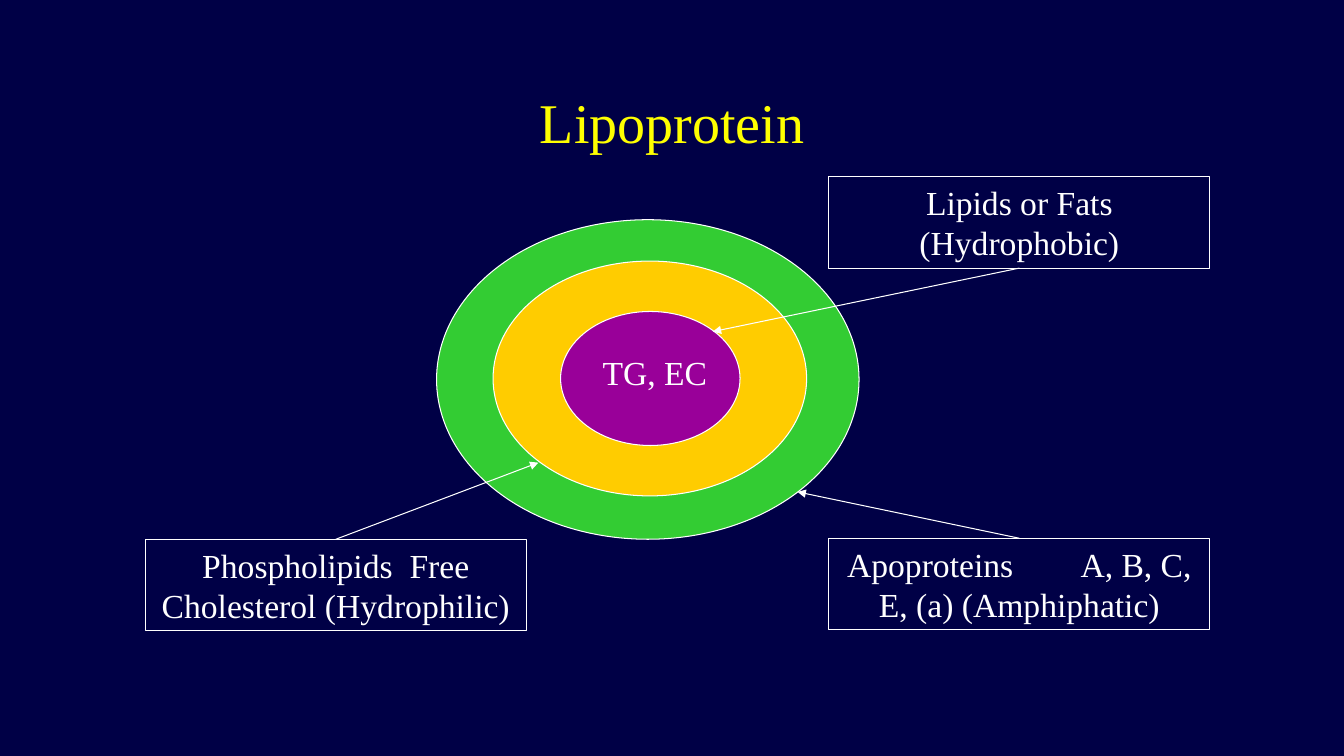
from lxml import etree
from pptx import Presentation
from pptx import util as u
from pptx.dml.color import RGBColor
from pptx.enum import shapes, text
from pptx.oxml.ns import qn

# Content; lengths in px, 100 px to the inch
TITLE = ("Lipoprotein", (100, 82, 1133, 77))
CORE = ("TG, EC", (544, 344, 211, 50))
NAVY = RGBColor(0x00, 0x00, 0x46)
YELLOW = RGBColor(0xFF, 0xFF, 0x00)
WHITE = RGBColor(0xFF, 0xFF, 0xFF)
GREEN = RGBColor(0x33, 0xCC, 0x33)
AMBER = RGBColor(0xFF, 0xCC, 0x00)
PURPLE = RGBColor(0x99, 0x00, 0x99)
LAYERS = [
    ((433, 218, 419, 317), GREEN),
    ((489, 259, 311, 233), AMBER),
    ((556, 309, 178, 133), PURPLE),
]
# Words before the gap, words after it, extra gap in points,
# box left and top, arrow side, arrow target
LABELS = [
    ("Phospholipids", "Free Cholesterol (Hydrophilic)", 6, (144, 535), "top", (534, 459)),
    ("Apoproteins", "A, B, C, E, (a) (Amphiphatic)", 42, (822, 534), "top", (791, 488)),
    ("Lipids or Fats", "(Hydrophobic)", 0, (822, 175), "bottom", (707, 329)),
]
LABEL_W, LABEL_H = 378, 91
FONT = "Times New Roman"


def px(*lengths):
    return [u.Emu(length * 9144) for length in lengths]


def write(shape, pieces, size, color):
    """Fill a shape with one centred paragraph of (words, tracking) pieces."""
    frame = shape.text_frame
    frame.word_wrap = True
    para = frame.paragraphs[0]
    para.alignment = text.PP_ALIGN.CENTER
    for words, tracking in pieces:
        span = para.add_run()
        span.text = words
        span.font.name = FONT
        span.font.size = u.Pt(size)
        span.font.color.rgb = color
        if tracking:
            span.font._element.set("spc", str(tracking * 100))
    return frame


def outline(shape):
    shape.line.color.rgb = WHITE
    shape.line.width = u.Pt(0.75)


def add_outlined(page, kind, place, color=None):
    shape = page.shapes.add_shape(kind, *px(*place))
    shape.shadow.inherit = False
    if color is None:
        shape.fill.background()
    else:
        shape.fill.solid()
        shape.fill.fore_color.rgb = color
    outline(shape)
    return shape


def add_arrow(page, start, end):
    arrow = page.shapes.add_connector(shapes.MSO_CONNECTOR.STRAIGHT, *px(*start, *end))
    outline(arrow)
    etree.SubElement(arrow.line._get_or_add_ln(), qn("a:tailEnd"), type="triangle")
    etree.SubElement(arrow._element.spPr, qn("a:effectLst"))


def main():
    deck = Presentation()
    deck.slide_width, deck.slide_height = px(1333, 750)
    page = deck.slides.add_slide(deck.slide_layouts[5])
    page.background.fill.solid()
    page.background.fill.fore_color.rgb = NAVY

    # Title
    words, place = TITLE
    title = page.shapes.title
    title.left, title.top, title.width, title.height = px(*place)
    frame = write(title, [(words, 0)], 40, YELLOW)
    frame.vertical_anchor = text.MSO_ANCHOR.MIDDLE

    # Particle layers, from the outside in
    for place, color in LAYERS:
        add_outlined(page, shapes.MSO_SHAPE.OVAL, place, color)
    words, place = CORE
    core = page.shapes.add_textbox(*px(*place))
    frame = write(core, [(words, 0)], 24, WHITE)
    frame.paragraphs[0].line_spacing = u.Pt(29)

    # Labels, each with an arrow to its layer
    for before, after, gap, (left, top), side, target in LABELS:
        box = add_outlined(page, shapes.MSO_SHAPE.RECTANGLE, (left, top, LABEL_W, LABEL_H))
        frame = write(box, [(before, 0), (" ", gap), (after, 0)], 24, WHITE)
        frame.vertical_anchor = text.MSO_ANCHOR.TOP
        frame.paragraphs[0].line_spacing = u.Pt(29)
        edge = top if side == "top" else top + LABEL_H
        add_arrow(page, (left + LABEL_W // 2, edge), target)

    deck.save("out.pptx")


if __name__ == "__main__":
    main()
